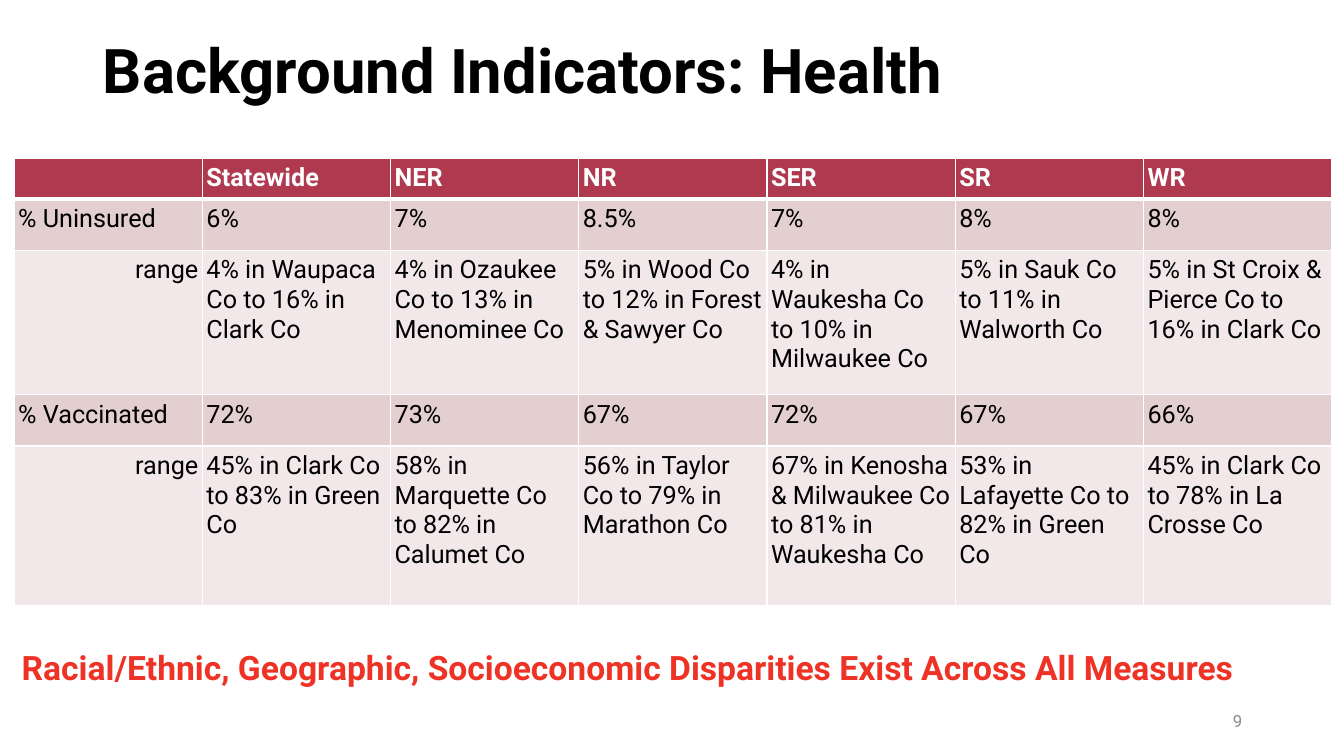
from lxml import etree
from pptx import Presentation
from pptx.dml.color import RGBColor
from pptx.enum import text
from pptx.oxml import ns
from pptx.util import Inches, Pt

TITLE = "Background Indicators: Health"
ROWS = [
    ["", "Statewide", "NER", "NR", "SER", "SR", "WR"],
    ["% Uninsured", "6%", "7%", "8.5%", "7%", "8%", "8%"],
    ["range",
     "4% in Waupaca Co to 16% in Clark Co",
     "4% in Ozaukee Co to 13% in Menominee Co",
     "5% in Wood Co to 12% in Forest & Sawyer Co",
     "4% in Waukesha Co to 10% in Milwaukee Co",
     "5% in Sauk Co to 11% in Walworth Co",
     "5% in St Croix & Pierce Co to 16% in Clark Co"],
    ["% Vaccinated", "72%", "73%", "67%", "72%", "67%", "66%"],
    ["range",
     "45% in Clark Co to 83% in Green Co",
     "58% in Marquette Co to 82% in Calumet Co",
     "56% in Taylor Co to 79% in Marathon Co",
     "67% in Kenosha & Milwaukee Co to 81% in Waukesha Co",
     "53% in Lafayette Co to 82% in Green Co",
     "45% in Clark Co to 78% in La Crosse Co"],
]
TAKEAWAY = "Racial/Ethnic, Geographic, Socioeconomic Disparities Exist Across All Measures"
SLIDE_NUMBER = "9"

FONT = "Roboto"
COLORS = {"black": "000000", "white": "FFFFFF", "header": "AF394E", "value": "E3CED0",
          "range": "F2E8E9", "takeaway": "EE3326", "number": "8C8C8C"}
ROW_HEIGHTS = [0.36, 0.51, 1.43, 0.51, 1.58]
TABLE_WIDTH = 13.07
ALIGN = text.PP_ALIGN


def write(frame, content, size, color, bold=False, align=ALIGN.LEFT):
    frame.text = content
    paragraph = frame.paragraphs[0]
    paragraph.alignment = align
    for run in paragraph.runs:
        run.font.name = FONT
        run.font.size = Pt(size)
        run.font.bold = bold
        run.font.color.rgb = RGBColor.from_string(COLORS[color])


def add_label(slide, box, *style, **options):
    frame = slide.shapes.add_textbox(*map(Inches, box)).text_frame
    frame.word_wrap = True
    write(frame, *style, **options)
    return frame


def set_borders(cell, widths):
    """Draw white borders, widths in points for left, right, top and bottom."""
    properties = cell._tc.get_or_add_tcPr()
    for index, (side, width) in enumerate(zip("LRTB", widths)):
        line = etree.Element(ns.qn(f"a:ln{side}"), w=str(Pt(width)))
        fill = etree.SubElement(line, ns.qn("a:solidFill"))
        etree.SubElement(fill, ns.qn("a:srgbClr"), val=COLORS["white"])
        properties.insert(index, line)


def add_indicator_table(slide):
    columns = len(ROWS[0])
    table = slide.shapes.add_table(len(ROWS), columns, Inches(0.14), Inches(1.57),
                                   Inches(TABLE_WIDTH), Inches(sum(ROW_HEIGHTS))).table
    for column in table.columns:
        column.width = Inches(TABLE_WIDTH / columns)
    for row_index, (row, height) in enumerate(zip(ROWS, ROW_HEIGHTS)):
        table.rows[row_index].height = Inches(height)
        is_header = row_index == 0
        is_range = row[0] == "range"
        fill = "header" if is_header else "range" if is_range else "value"
        for column_index, content in enumerate(row):
            cell = table.cell(row_index, column_index)
            cell.margin_left = cell.margin_right = Inches(0.04)
            cell.margin_top = cell.margin_bottom = Inches(0.05)
            cell.fill.solid()
            cell.fill.fore_color.rgb = RGBColor.from_string(COLORS[fill])
            set_borders(cell, (1, 1, 3 if row_index == 1 else 1, 3 if is_header else 1))
            write(cell.text_frame, content, 18, "white" if is_header else "black", is_header,
                  ALIGN.RIGHT if is_range and column_index == 0 else ALIGN.LEFT)


def main():
    presentation = Presentation()
    presentation.slide_width, presentation.slide_height = Inches(13.33), Inches(7.5)
    slide = presentation.slides.add_slide(presentation.slide_layouts[5])

    title = slide.shapes.title
    title.left, title.top, title.width, title.height = map(Inches, (0.92, 0, 11.5, 1.45))
    title.text_frame.vertical_anchor = text.MSO_ANCHOR.MIDDLE
    write(title.text_frame, TITLE, 44, "black", bold=True)
    title.text_frame.paragraphs[0].line_spacing = 0.9

    add_indicator_table(slide)
    add_label(slide, (0.03, 6.37, 12.39, 0.5), TAKEAWAY, 24, "takeaway",
              bold=True, align=ALIGN.CENTER)
    number = add_label(slide, (9.42, 6.95, 3, 0.4), SLIDE_NUMBER, 12, "number",
                       align=ALIGN.RIGHT)
    number.vertical_anchor = text.MSO_ANCHOR.MIDDLE

    presentation.save("out.pptx")


if __name__ == "__main__":
    main()
